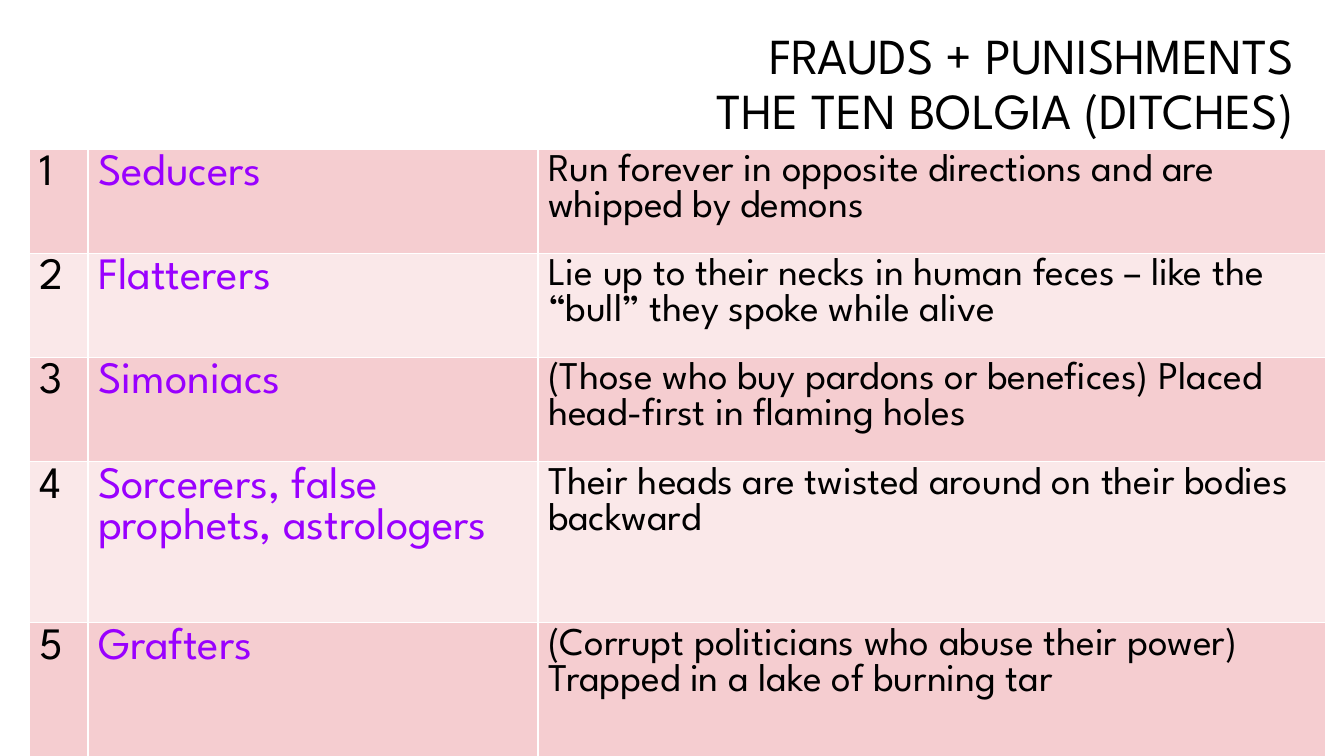
from pptx import Presentation
from pptx.dml.color import RGBColor
from pptx.enum.text import MSO_ANCHOR, PP_ALIGN
from pptx.oxml import parse_xml
from pptx.oxml.ns import nsdecls
from pptx.util import Pt

# Content
HEADING = "FRAUDS + PUNISHMENTS\vTHE TEN BOLGIA (DITCHES)"
BOLGIA = [
    ("Seducers", "Run forever in opposite directions and are whipped by demons"),
    ("Flatterers", "Lie up to their necks in human feces – like the “bull” they spoke while alive"),
    ("Simoniacs", "(Those who buy pardons or benefices) Placed head-first in flaming holes"),
    ("Sorcerers, false prophets, astrologers",
     "Their heads are twisted around on their bodies backward"),
    ("Grafters", "(Corrupt politicians who abuse their power) Trapped in a lake of burning tar"),
]

# Format
FONT = "League Spartan"
BLACK = RGBColor(0x00, 0x00, 0x00)
PURPLE = RGBColor(0x99, 0x00, 0xFF)
ROSE = RGBColor(0xF5, 0xCD, 0xD0)
PALE_ROSE = RGBColor(0xFA, 0xE8, 0xE9)
WHITE = RGBColor(0xFF, 0xFF, 0xFF)
COLUMN_STYLES = [(32, BLACK), (32, PURPLE), (28, BLACK)]
COLUMN_WIDTHS = [59, 450, 788]
ROW_HEIGHTS = [98, 98, 98, 161, 142]
BORDER_WIDTH = Pt(1)


def px(length):
    return round(length * 914400 / 100.8)


def style_runs(paragraph, size, color):
    for run in paragraph.runs:
        for name, value in {"name": FONT, "size": Pt(size)}.items():
            setattr(run.font, name, value)
        run.font.color.rgb = color


def add_borders(cell):
    properties = cell._tc.get_or_add_tcPr()
    for position, side in enumerate(("lnL", "lnR", "lnT", "lnB")):
        properties.insert(position, parse_xml(
            f'<a:{side} {nsdecls("a")} w="{BORDER_WIDTH}"><a:solidFill>'
            f'<a:srgbClr val="{WHITE}"/></a:solidFill></a:{side}>'))


deck = Presentation()
deck.slide_width, deck.slide_height = px(1344), px(756)
slide = deck.slides.add_slide(deck.slide_layouts[6])

# Heading
heading = slide.shapes.add_textbox(px(52), px(20), px(1252), px(85)).text_frame
frame_format = {"word_wrap": True, "vertical_anchor": MSO_ANCHOR.TOP}
for side in ("left", "top", "right", "bottom"):
    frame_format[f"margin_{side}"] = px(10)
for name, value in frame_format.items():
    setattr(heading, name, value)
heading_line = heading.paragraphs[0]
heading_line.text = HEADING
heading_line.alignment = PP_ALIGN.RIGHT
heading_line.line_spacing = Pt(39)
style_runs(heading_line, 36, BLACK)

# Table of ditches
ditches = slide.shapes.add_table(
    len(BOLGIA), len(COLUMN_WIDTHS), px(29), px(149),
    px(sum(COLUMN_WIDTHS)), px(sum(ROW_HEIGHTS))).table
ditches.first_row = ditches.horz_banding = False
for column, width in zip(ditches.columns, COLUMN_WIDTHS):
    column.width = px(width)
for row, height in zip(ditches.rows, ROW_HEIGHTS):
    row.height = px(height)

for index, (sinners, punishment) in enumerate(BOLGIA):
    texts = (str(index + 1), sinners, punishment)
    for cell, text, style in zip(ditches.rows[index].cells, texts, COLUMN_STYLES):
        cell.text = text
        cell.fill.solid()
        cell.fill.fore_color.rgb = PALE_ROSE if index % 2 else ROSE
        add_borders(cell)
        style_runs(cell.text_frame.paragraphs[0], *style)

deck.save("out.pptx")
